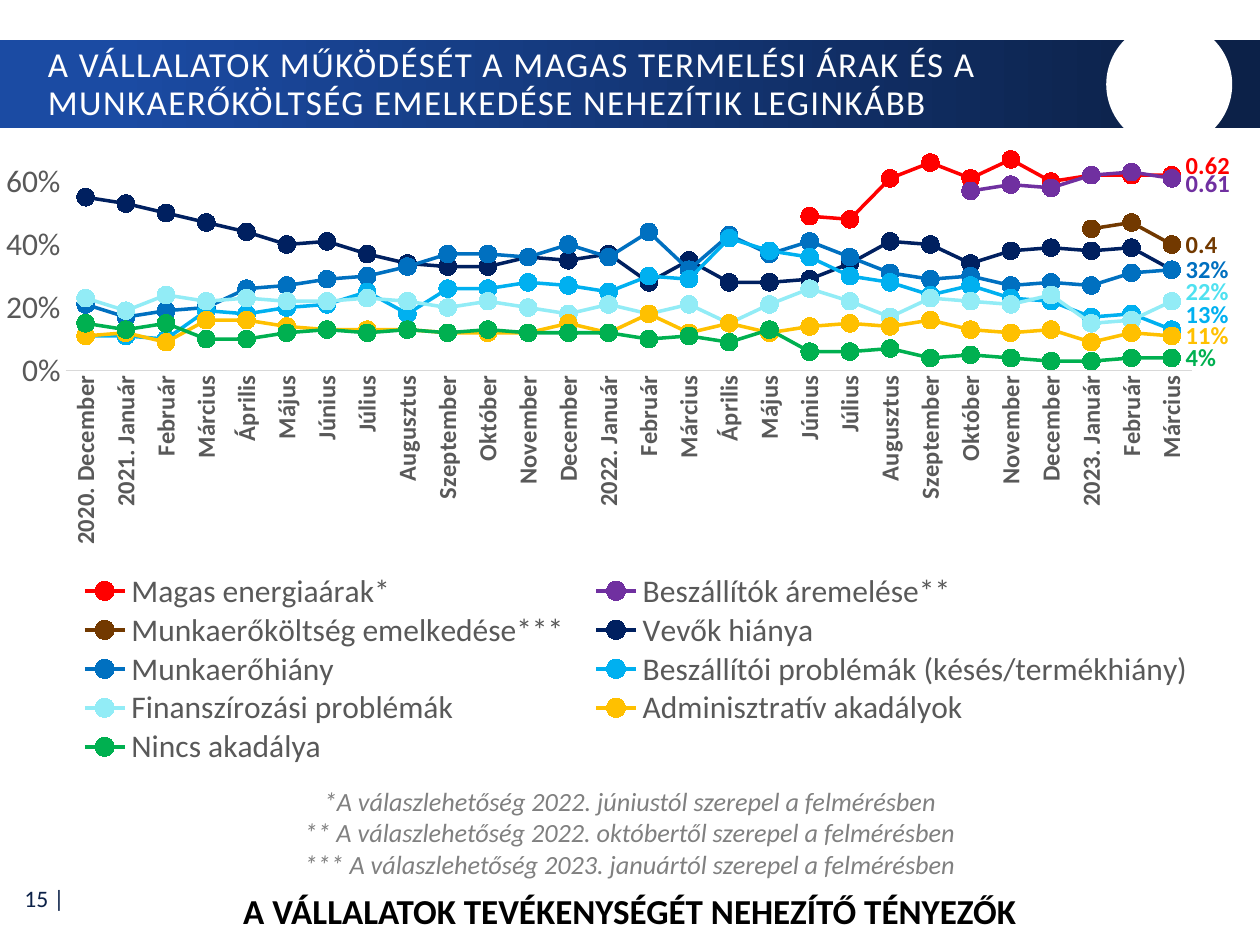
from lxml import etree
from pptx import Presentation
from pptx import util as u
from pptx.chart.data import CategoryChartData
from pptx.dml.color import RGBColor
from pptx.enum import chart as c, shapes, text
from pptx.oxml import parse_xml
from pptx.oxml.ns import nsdecls, qn

COLUMNS, ROWS = 100, 75
NAVY, GREY, WHITE = "0C2148", "595959", "FFFFFF"
MONTHS = ["Január", "Február", "Március", "Április", "Május", "Június", "Július",
          "Augusztus", "Szeptember", "Október", "November", "December"]
CATEGORIES = (["2020. December", "2021. Január"] + MONTHS[1:]
              + ["2022. Január"] + MONTHS[1:] + ["2023. Január"] + MONTHS[1:3])
SERIES = [
    ("Magas energiaárak*", "FF0000", "FF0000", "General", -0.014,
     [49, 48, 61, 66, 61, 67, 60, 62, 62, 62]),
    ("Beszállítók áremelése**", "7030A0", "7030A0", "General", 0.008,
     [57, 59, 58, 62, 63, 61]),
    ("Munkaerőköltség emelkedése***", "723900", "723900", "General", 0,
     [45, 47, 40]),
    ("Vevők hiánya", "002060", None, "0%", 0,
     [55, 53, 50, 47, 44, 40, 41, 37, 34, 33, 33, 36, 35, 37,
      28, 35, 28, 28, 29, 34, 41, 40, 34, 38, 39, 38, 39, 32]),
    ("Munkaerőhiány", "0070C0", "0070C0", "0%", 0,
     [21, 17, 19, 20, 26, 27, 29, 30, 33, 37, 37, 36, 40, 36,
      44, 32, 43, 37, 41, 36, 31, 29, 30, 27, 28, 27, 31, 32]),
    ("Beszállítói problémák (késés/termékhiány)", "00B0F0", "00B0F0", "0%", -0.023,
     [11, 11, 10, 19, 18, 20, 21, 25, 18, 26, 26, 28, 27, 25,
      30, 29, 42, 38, 36, 30, 28, 24, 27, 23, 22, 17, 18, 13]),
    ("Finanszírozási problémák", "92ECF6", "4FE1F0", "0%", -0.014,
     [23, 19, 24, 22, 23, 22, 22, 23, 22, 20, 22, 20, 18, 21,
      18, 21, 15, 21, 26, 22, 17, 23, 22, 21, 24, 15, 16, 22]),
    ("Adminisztratív akadályok", "FFC000", "FFC000", "0%", 0,
     [11, 12, 9, 16, 16, 14, 13, 13, 13, 12, 12, 12, 15, 12,
      18, 12, 15, 12, 14, 15, 14, 16, 13, 12, 13, 9, 12, 11]),
    ("Nincs akadálya", "00B050", "00B050", "0%", 0,
     [15, 13, 15, 10, 10, 12, 13, 12, 13, 12, 13, 12, 12, 12,
      10, 11, 9, 13, 6, 6, 7, 4, 5, 4, 3, 3, 4, 4]),
]


def rgb(value):
    return RGBColor.from_string(value)


def style_font(font, size, color, bold=False, italic=False):
    font.name, font.size, font.bold, font.italic = "Calibri", u.Pt(size), bold, italic
    font.color.rgb = rgb(color)


def write(frame, lines, size, color, align=text.PP_ALIGN.CENTER, bold=False, italic=False,
          anchor=text.MSO_ANCHOR.TOP, leading=1.0, spacing=0):
    frame.word_wrap = True
    frame.auto_size = text.MSO_AUTO_SIZE.NONE
    frame.vertical_anchor = anchor
    for index, line in enumerate(lines):
        para = frame.add_paragraph() if index else frame.paragraphs[0]
        properties = para._p.get_or_add_pPr()
        properties.set("marL", "0")
        properties.set("indent", "0")
        etree.SubElement(properties, qn("a:buNone"))
        para.alignment, para.line_spacing = align, leading
        para.space_before = u.Pt(0)
        span = para.add_run()
        span.text = line
        style_font(span.font, size, color, bold, italic)
        if spacing:
            span._r.get_or_add_rPr().set("spc", str(round(spacing * 100)))


def layout_xml(inner=False, **places):
    target = '<c:layoutTarget val="inner"/>' if inner else ""
    modes = "".join(f'<c:{key}Mode val="edge"/>' for key in ("x", "y") if "w" in places)
    values = "".join(f'<c:{key} val="{value}"/>' for key, value in places.items())
    return parse_xml(f'<c:layout {nsdecls("c")}><c:manualLayout>{target}{modes}{values}'
                     '</c:manualLayout></c:layout>')


class Page:
    def __init__(self, deck):
        self.deck = deck
        self.slide = deck.slides.add_slide(deck.slide_layouts[1])

    def area(self, left, top, width, height):
        column, row = self.deck.slide_width / COLUMNS, self.deck.slide_height / ROWS
        return [u.Emu(round(size)) for size in
                (left * column, top * row, width * column, height * row)]

    def backdrop(self, kind, *place):
        shape = self.slide.shapes.add_shape(kind, *self.area(*place))
        shape.shadow.inherit = False
        shape.line.fill.background()
        self.slide.shapes.title._element.addprevious(shape._element)
        return shape.fill

    def plain(self, kind, color, *place):
        fill = self.backdrop(kind, *place)
        fill.solid()
        fill.fore_color.rgb = rgb(color)

    def gradient(self, kind, stops, *place):
        fill = self.backdrop(kind, *place)
        fill.gradient()
        fill.gradient_angle = 0
        for stop, (position, color) in zip(fill.gradient_stops, stops):
            stop.position, stop.color.rgb = position, rgb(color)

    def placeholder(self, index, place, lines, **style):
        box = self.slide.placeholders[index]
        box.left, box.top, box.width, box.height = self.area(*place)
        write(box.text_frame, lines, **style)

    def label(self, place, line, **style):
        box = self.slide.shapes.add_textbox(*self.area(*place))
        write(box.text_frame, [line], **style)

    def line_chart(self, *place):
        data = CategoryChartData()
        data.categories = CATEGORIES
        for name, _, _, number_format, _, values in SERIES:
            blanks = [None] * (len(CATEGORIES) - len(values))
            data.add_series(name, blanks + [value / 100 for value in values], number_format)
        chart = self.slide.shapes.add_chart(
            c.XL_CHART_TYPE.LINE_MARKERS, *self.area(*place), data).chart
        style_font(chart.font, 14, "000000")
        chart.has_title = False
        plot_area = chart._chartSpace.chart.plotArea
        for old in plot_area.findall(qn("c:layout")):
            plot_area.remove(old)
        plot_area.insert(0, layout_xml(True, x=0.052, y=0.035, w=0.894, h=0.338))
        self.axes(chart)
        self.legend(chart)
        chart.plots[0].vary_by_categories = False
        for series, row in zip(chart.plots[0].series, SERIES):
            self.series(series, *row[1:5])

    def axes(self, chart):
        months, shares = chart.category_axis, chart.value_axis
        for axis in (months, shares):
            axis.major_tick_mark = axis.minor_tick_mark = c.XL_TICK_MARK.NONE
            axis.has_major_gridlines = False
        style_font(months.tick_labels.font, 14, GREY, bold=True)
        months._element.txPr.bodyPr.set("rot", "-5400000")
        months.format.line.color.rgb = rgb("D9D9D9")
        months.format.line.width = u.Pt(0.75)
        style_font(shares.tick_labels.font, 18, GREY)
        shares.tick_labels.number_format = "0%"
        shares.tick_labels.number_format_is_linked = False
        shares.minimum_scale, shares.maximum_scale, shares.major_unit = 0, 0.7, 0.1
        shares.format.line.fill.background()

    def legend(self, chart):
        chart.has_legend = True
        legend = chart.legend
        legend.position = c.XL_LEGEND_POSITION.BOTTOM
        legend.include_in_layout = False
        style_font(legend.font, 18, GREY)
        for old in legend._element.findall(qn("c:layout")):
            legend._element.remove(old)
        legend._element.find(qn("c:legendPos")).addnext(
            layout_xml(x=0.05, y=0.68, w=0.91, h=0.3))

    def series(self, series, color, label_color, number_format, shift):
        series.smooth = False
        series.format.line.color.rgb = rgb(color)
        series.format.line.width = u.Pt(2)
        marker = series.marker
        marker.style, marker.size = c.XL_MARKER_STYLE.CIRCLE, 10
        marker.format.fill.solid()
        marker.format.fill.fore_color.rgb = rgb(color)
        marker.format.line.color.rgb = rgb(color)
        if not label_color:
            return
        label = series.points[len(CATEGORIES) - 1].data_label
        style_font(label.font, 14, label_color, bold=True)
        label.position = c.XL_LABEL_POSITION.RIGHT
        index = series._element.find(".//" + qn("c:dLbl")).find(qn("c:idx"))
        index.addnext(parse_xml(f'<c:numFmt {nsdecls("c")} formatCode="{number_format}" '
                                'sourceLinked="0"/>'))
        if shift:
            index.addnext(layout_xml(x=0, y=shift))


def main():
    deck = Presentation()
    deck.slide_width, deck.slide_height = u.Inches(10), u.Inches(7.5)
    page = Page(deck)
    page.gradient(shapes.MSO_SHAPE.RECTANGLE, [(0.09, "1B4BA3"), (0.95, NAVY)], 0, 3.2, 100, 7)
    page.plain(shapes.MSO_SHAPE.OVAL, WHITE, 87.8, 1.7, 10, 10)
    page.placeholder(0, (2.8, 3.4, 87.5, 6.7),
                     ["A VÁLLALATOK MŰKÖDÉSÉT A MAGAS TERMELÉSI ÁRAK ÉS A "
                      "MUNKAERŐKÖLTSÉG EMELKEDÉSE NEHEZÍTIK LEGINKÁBB"],
                     size=20, color=WHITE, align=text.PP_ALIGN.LEFT,
                     anchor=text.MSO_ANCHOR.MIDDLE, leading=0.9, spacing=0.8)
    page.placeholder(1, (0, 61.8, 100, 8.6),
                     ["*A válaszlehetőség 2022. júniustól szerepel a felmérésben",
                      "** A válaszlehetőség 2022. októbertől szerepel a felmérésben",
                      "*** A válaszlehetőség 2023. januártól szerepel a felmérésben"],
                     size=15, color="808080", italic=True)
    page.label((9.7, 70.1, 80.6, 4.4), "A VÁLLALATOK TEVÉKENYSÉGÉT NEHEZÍTŐ TÉNYEZŐK",
               size=20, color="000000", bold=True)
    page.label((0.1, 69.4, 6, 3.7), "15 |", size=13.5, color=NAVY,
               align=text.PP_ALIGN.RIGHT, anchor=text.MSO_ANCHOR.MIDDLE)
    page.line_chart(0, 10.1, 100, 51.8)
    deck.save("out.pptx")


if __name__ == "__main__":
    main()
